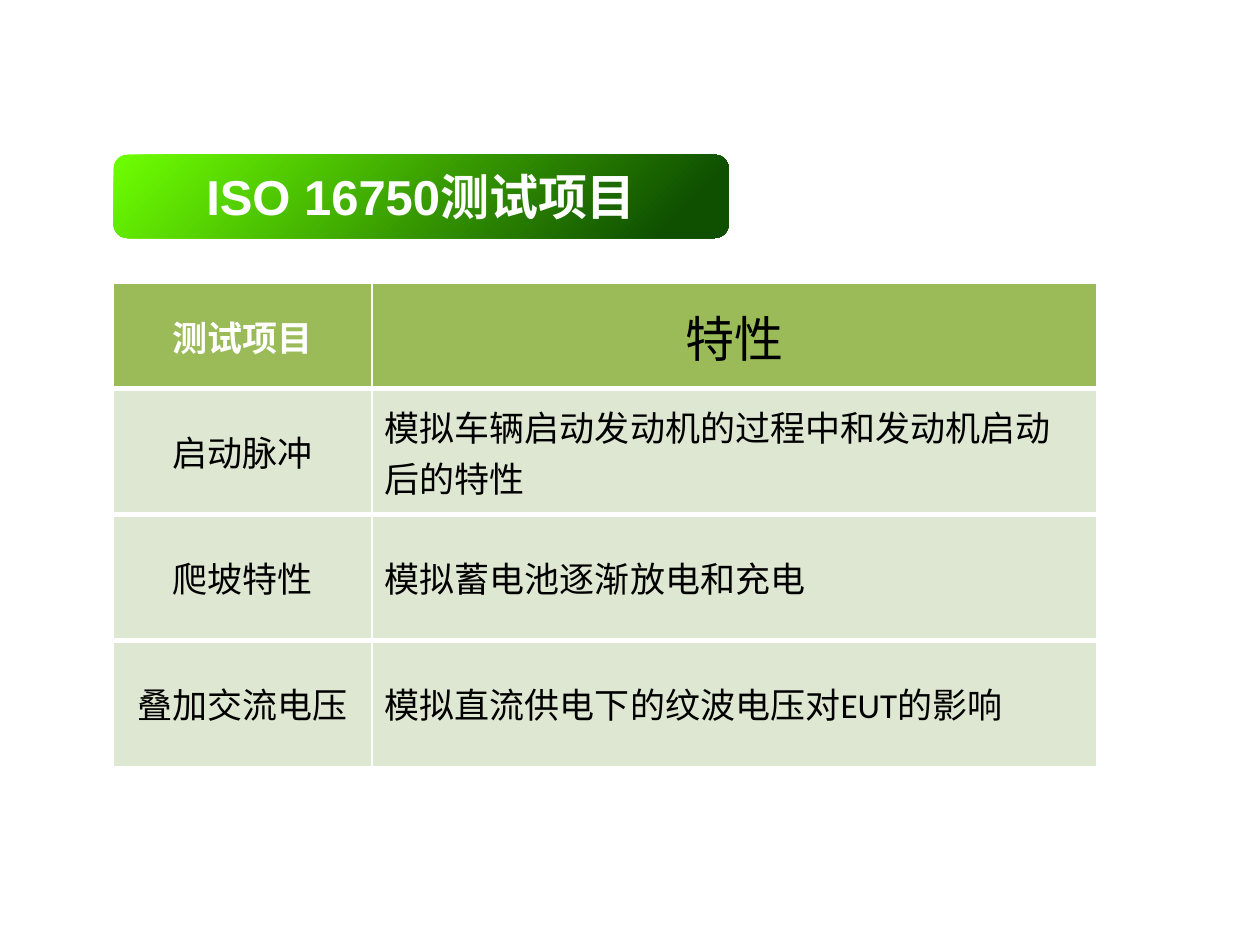
from lxml import etree
from pptx import Presentation
from pptx import util as u
from pptx.dml.color import RGBColor
from pptx.enum import shapes, text
from pptx.oxml import ns

ROWS = [
    ("测试项目", "特性"),
    ("启动脉冲", "模拟车辆启动发动机的过程中和发动机启动后的特性"),
    ("爬坡特性", "模拟蓄电池逐渐放电和充电"),
    ("叠加交流电压", "模拟直流供电下的纹波电压对EUT的影响"),
]


def rgb(value):
    """Return the colour for a hex string."""
    return RGBColor.from_string(value)


def style_paragraph(p, font, size, color, bold, align):
    """Set the font and alignment of a paragraph."""
    p.alignment = align
    p.font.name = font
    p.font.size = u.Pt(size)
    p.font.bold = bold
    p.font.color.rgb = rgb(color)


def add_border(cell, top, bottom):
    """Give a cell white borders, with thin sides."""
    tc_pr = cell._tc.get_or_add_tcPr()
    widths = {"lnL": 1, "lnR": 1, "lnT": top, "lnB": bottom}
    for i, (tag, width) in enumerate(widths.items()):
        ln = etree.Element(ns.qn(f"a:{tag}"), w=str(u.Pt(width)))
        fill = etree.SubElement(ln, ns.qn("a:solidFill"))
        etree.SubElement(fill, ns.qn("a:srgbClr"), val="FFFFFF")
        tc_pr.insert(i, ln)


def add_banner(s, left, top, width, height):
    """Draw the rounded title banner."""
    sp = s.shapes.add_shape(shapes.MSO_SHAPE.ROUNDED_RECTANGLE,
                            u.Cm(left), u.Cm(top), u.Cm(width), u.Cm(height))
    sp.shadow.inherit = False
    sp.line.fill.background()
    sp.fill.gradient()
    sp.fill.gradient_angle = 315
    stops = [(0, "6EFF01"), (0.9, "0F5000")]
    for stop, (position, color) in zip(sp.fill.gradient_stops, stops):
        stop.position = position
        stop.color.rgb = rgb(color)
    tf = sp.text_frame
    tf.vertical_anchor = text.MSO_ANCHOR.MIDDLE
    p = tf.paragraphs[0]
    p.text = "ISO 16750测试项目"
    style_paragraph(p, "Arial", 28, "FFFFFF", True, text.PP_ALIGN.CENTER)


def add_test_table(s, left, top, width, height):
    """Draw the table of test items and their characteristics."""
    table = s.shapes.add_table(len(ROWS), 2, u.Cm(left), u.Cm(top),
                               u.Cm(width), u.Cm(height)).table
    item_width, body_height = 5.21, 2.54
    table.columns[0].width = u.Cm(item_width)
    table.columns[1].width = u.Cm(width - item_width)
    last = len(ROWS) - 1
    for r, values in enumerate(ROWS):
        header = r == 0
        table.rows[r].height = u.Cm(height - last * body_height if header else body_height)
        for c, value in enumerate(values):
            cell = table.cell(r, c)
            cell.vertical_anchor = text.MSO_ANCHOR.MIDDLE
            cell.fill.solid()
            cell.fill.fore_color.rgb = rgb("9BBB59" if header else "DEE7D1")
            add_border(cell, 1 if header else 3, 1 if r == last else 3)
            p = cell.text_frame.paragraphs[0]
            p.text = value
            item_header = header and c == 0
            centred = header or c == 0
            style_paragraph(p, "Calibri", 28 if header and c == 1 else 20,
                            "FFFFFF" if item_header else "000000", item_header,
                            text.PP_ALIGN.CENTER if centred else text.PP_ALIGN.LEFT)


def main():
    """Build and save the slide."""
    prs = Presentation()
    prs.slide_width, prs.slide_height = u.Cm(25.4), u.Cm(19.05)
    s = prs.slides.add_slide(prs.slide_layouts[6])
    add_banner(s, 2.29, 3.12, 12.4, 1.68)
    add_test_table(s, 2.29, 5.72, 19.81, 9.73)
    prs.save("out.pptx")


if __name__ == "__main__":
    main()
